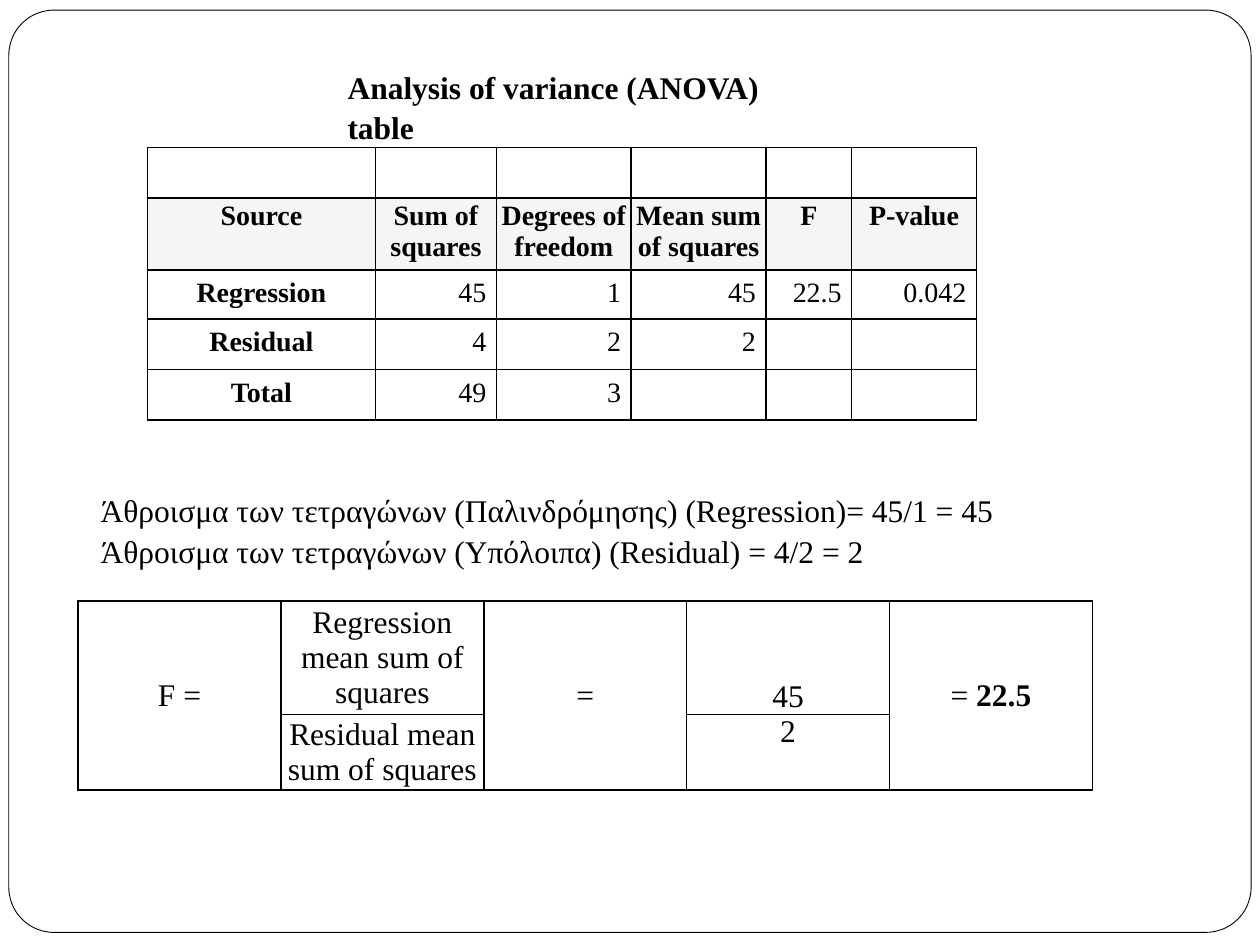
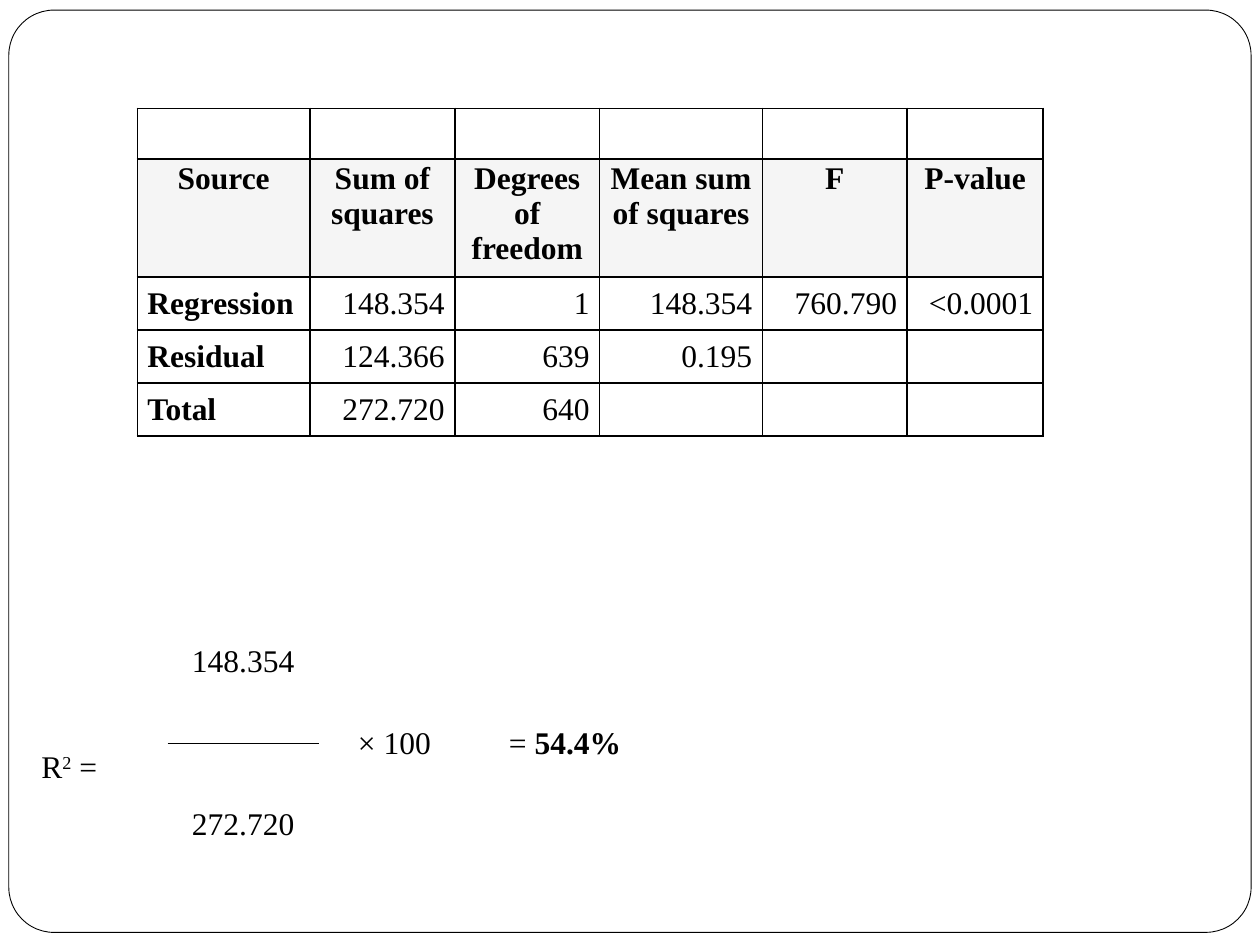
import pptx
import pptx.util
import pptx.dml.color
import pptx.enum.shapes
import pptx.enum.text
import pptx.oxml
import pptx.oxml.ns

Inches, Pt = pptx.util.Inches, pptx.util.Pt
ALIGN = pptx.enum.text.PP_ALIGN
ANCHOR = pptx.enum.text.MSO_ANCHOR
BLACK = pptx.dml.color.RGBColor(0x00, 0x00, 0x00)
WHITE = pptx.dml.color.RGBColor(0xFF, 0xFF, 0xFF)
GREY = pptx.dml.color.RGBColor(0xF5, 0xF5, 0xF5)
FONT = "Times New Roman"
TIGHT, WIDE, NONE = (0.02, 0.02), (0.08, 0.06), (0, 0)
EDGES = "LRTB"

# A line of text is a string, or a list of (text, style) runs.
TITLE = ["Analysis of variance (ANOVA) table"]
SUMS = [
    "Άθροισμα των τετραγώνων (Παλινδρόμησης) (Regression)= 45/1 = 45",
    "Άθροισμα των τετραγώνων (Υπόλοιπα) (Residual) = 4/2 = 2",
]
HEADS = ["Source", "Sum of squares", "Degrees of freedom",
         "Mean sum of squares", "F", "P-value"]
SMALL = {
    "at": (1.17, 1.17),
    "cols": [1.81, 0.96, 1.07, 1.07, 0.68, 0.99],
    "rows": [0.37, 0.57, 0.39, 0.39, 0.39],
    "size": 16, "label": ALIGN.CENTER, "anchor": ANCHOR.TOP,
    "data": [["Regression", "45", "1", "45", "22.5", "0.042"],
             ["Residual", "4", "2", "2"],
             ["Total", "49", "3"]],
}
LARGE = {
    "at": (1.09, 0.86),
    "cols": [1.37, 1.15, 1.15, 1.29, 1.15, 1.08],
    "rows": [0.37, 0.87, 0.4, 0.4, 0.4],
    "size": 18, "label": ALIGN.LEFT, "anchor": ANCHOR.MIDDLE,
    "data": [["Regression", "148.354", "1", "148.354", "760.790", "<0.0001"],
             ["Residual", "124.366", "639", "0.195"],
             ["Total", "272.720", "640"]],
}
# Formula cells: row, column, line, anchor, alignment
RATIO = [
    (0, 0, "F =", ANCHOR.MIDDLE, ALIGN.CENTER),
    (0, 1, "Regression mean sum of squares", ANCHOR.MIDDLE, ALIGN.CENTER),
    (1, 1, "Residual mean sum of squares", ANCHOR.MIDDLE, ALIGN.CENTER),
    (0, 2, "=", ANCHOR.MIDDLE, ALIGN.CENTER),
    (0, 3, "45", ANCHOR.BOTTOM, ALIGN.CENTER),
    (1, 3, "2", ANCHOR.TOP, ALIGN.CENTER),
    (0, 4, [("= ", ""), ("22.5", "bold")], ANCHOR.MIDDLE, ALIGN.CENTER),
]
SHARE = [
    (0, 0, "148.354", ANCHOR.MIDDLE, ALIGN.CENTER),
    (1, 0, "272.720", ANCHOR.MIDDLE, ALIGN.CENTER),
    (0, 1, "× 100", ANCHOR.MIDDLE, ALIGN.CENTER),
    (0, 2, [("= ", ""), ("54.4%", "bold")], ANCHOR.MIDDLE, ALIGN.RIGHT),
]
SQUARE = [[("R", ""), ("2", "super"), (" =", "")]]


def write(frame, lines, size=18, bold=False, align=ALIGN.LEFT, space=None):
    for i, line in enumerate(lines):
        para = frame.paragraphs[0] if i == 0 else frame.add_paragraph()
        para.alignment = align
        para.line_spacing = space
        font = para.font
        font.name, font.size, font.bold = FONT, Pt(size), bold
        font.color.rgb = BLACK
        for text, style in [(line, "")] if isinstance(line, str) else line:
            run = para.add_run()
            run.text = text
            if style == "bold":
                run.font.bold = True
            elif style == "super":
                run._r.get_or_add_rPr().set("baseline", "30000")


def add_box(slide, at, lines, bold=False):
    frame = slide.shapes.add_textbox(*map(Inches, at)).text_frame
    frame.word_wrap = True
    write(frame, lines, bold=bold, space=1.07)


def add_slide(deck):
    """Add a blank slide with the rounded frame."""
    slide = deck.slides.add_slide(deck.slide_layouts[6])
    frame = slide.shapes.add_shape(
        pptx.enum.shapes.MSO_SHAPE.ROUNDED_RECTANGLE,
        *map(Inches, (0.07, 0.08, 9.86, 7.32)))
    frame.adjustments[0] = 0.049
    frame.shadow.inherit = False
    frame.fill.solid()
    frame.fill.fore_color.rgb = WHITE
    frame.line.color.rgb = BLACK
    frame.line.width = Pt(0.5)
    return slide


def rule(cell, edges):
    """Draw the given cell edges in black and leave the others clear."""
    props = cell._tc.get_or_add_tcPr()
    space = pptx.oxml.ns.nsdecls("a")
    for i, edge in enumerate(EDGES):
        paint = (f'<a:solidFill><a:srgbClr val="{BLACK}"/></a:solidFill>'
                 if edge in edges else "<a:noFill/>")
        props.insert(i, pptx.oxml.parse_xml(
            f'<a:ln{edge} {space} w="{int(Pt(1))}">{paint}</a:ln{edge}>'))


def add_grid(slide, at, cols, rows):
    """Add an empty white table."""
    area = (*at, sum(cols), sum(rows))
    grid = slide.shapes.add_table(
        len(rows), len(cols), *map(Inches, area)).table
    grid.first_row = grid.horz_banding = False
    for col, width in zip(grid.columns, cols):
        col.width = Inches(width)
    for row, height in zip(grid.rows, rows):
        row.height = Inches(height)
    for cell in grid.iter_cells():
        cell.fill.solid()
        cell.fill.fore_color.rgb = WHITE
    return grid


def fill_cell(cell, line, pad, anchor, **look):
    cell.margin_left = cell.margin_right = Inches(pad[0])
    cell.margin_top = cell.margin_bottom = Inches(pad[1])
    cell.vertical_anchor = anchor
    write(cell.text_frame, [line], **look)


def add_anova(slide, plan):
    grid = add_grid(slide, plan["at"], plan["cols"], plan["rows"])
    size = plan["size"]
    for cell in grid.iter_cells():
        rule(cell, EDGES)
    for c, head in enumerate(HEADS):
        cell = grid.cell(1, c)
        cell.fill.fore_color.rgb = GREY
        fill_cell(cell, head, TIGHT, ANCHOR.TOP,
                  size=size, bold=True, align=ALIGN.CENTER)
    for r, row in enumerate(plan["data"], 2):
        for c, text in enumerate(row):
            fill_cell(grid.cell(r, c), text, WIDE, plan["anchor"],
                      size=size, bold=c == 0,
                      align=ALIGN.RIGHT if c else plan["label"])


def add_sum(slide, at, cols, rows, parts, boxed):
    """Add a formula; columns with a single part span both rows."""
    grid = add_grid(slide, at, cols, rows)
    split = {c for r, c, *rest in parts if r == 1}
    for c in range(len(cols)):
        for r, bar in enumerate("BT"):
            rule(grid.cell(r, c),
                 EDGES if boxed else bar if c in split else "")
        if c not in split:
            grid.cell(0, c).merge(grid.cell(1, c))
    for r, c, line, anchor, align in parts:
        fill_cell(grid.cell(r, c), line, NONE, anchor, align=align)


def main():
    deck = pptx.Presentation()
    deck.slide_width, deck.slide_height = Inches(10), Inches(7.5)

    slide = add_slide(deck)
    add_box(slide, (2.66, 0.47, 3.85, 0.4), TITLE, bold=True)
    add_box(slide, (0.7, 3.83, 7.69, 0.71), SUMS)
    add_anova(slide, SMALL)
    add_sum(slide, (0.62, 4.77), [1.61] * 5, [0.9, 0.6], RATIO, True)

    slide = add_slide(deck)
    add_anova(slide, LARGE)
    add_sum(slide, (1.33, 4.61), [1.2] * 3, [1.29] * 2, SHARE, False)
    add_box(slide, (0.23, 5.86, 1.02, 0.4), SQUARE)

    deck.save("out.pptx")


if __name__ == "__main__":
    main()
